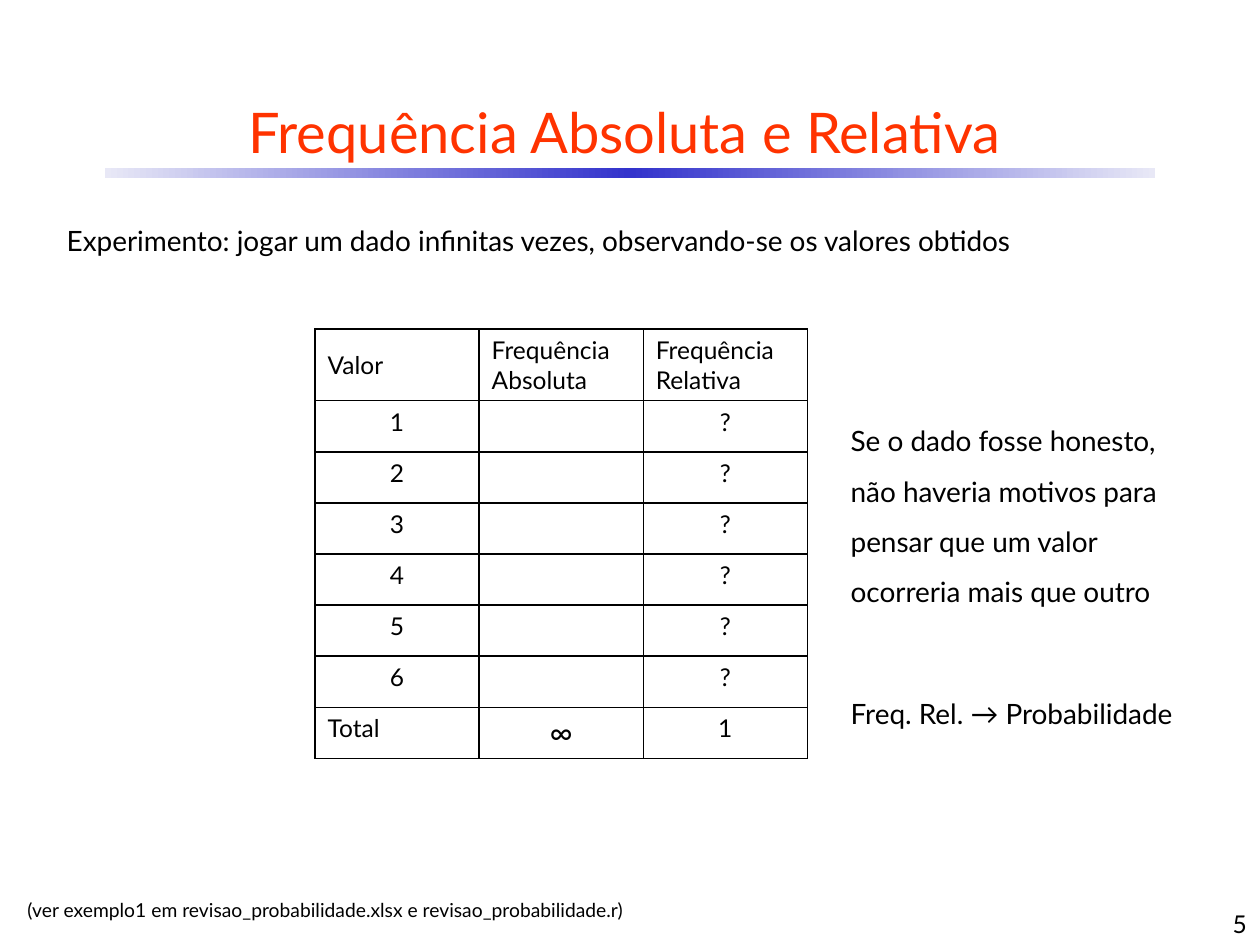
import copy

import pptx
import pptx.dml.color
import pptx.enum.shapes
import pptx.enum.text
import pptx.oxml
import pptx.oxml.ns
import pptx.util

Pt = pptx.util.Pt
Align = pptx.enum.text.PP_ALIGN
Anchor = pptx.enum.text.MSO_ANCHOR
FONT = "Lato"
ROWS = [
    ("Valor", "Frequência\vAbsoluta", "Frequência\vRelativa"),
    *((str(value), "", "?") for value in range(1, 7)),
    ("Total", "∞", "1"),
]


def color(hex_string):
    """Return an RGB colour from a hex string."""
    return pptx.dml.color.RGBColor.from_string(hex_string)


def write(frame, text, size, ink="000000", align=Align.LEFT):
    """Put one formatted paragraph into a text frame and return it."""
    para = frame.paragraphs[0]
    para.text = text
    para.alignment = align
    para.font.name = FONT
    para.font.size = Pt(size)
    para.font.color.rgb = color(ink)
    return para


def add_title(page, text):
    """Fill and place the title placeholder."""
    title = page.shapes.title
    title.left, title.top, title.width, title.height = Pt(24), Pt(48), Pt(666), Pt(54)
    title.text_frame.vertical_anchor = Anchor.MIDDLE
    title.text_frame.auto_size = pptx.enum.text.MSO_AUTO_SIZE.NONE
    write(title.text_frame, text, 32, "FF3300", Align.CENTER)


def add_rule(page):
    """Draw the bar under the title, fading towards both ends."""
    rule = page.shapes.add_shape(
        pptx.enum.shapes.MSO_SHAPE.RECTANGLE, Pt(60), Pt(96), Pt(600), Pt(6))
    rule.shadow.inherit = False
    rule.line.fill.background()
    rule.fill.gradient()
    rule.fill.gradient_angle = 0
    stop_list = rule._element.spPr.find(".//" + pptx.oxml.ns.qn("a:gsLst"))
    stop_list.append(copy.deepcopy(stop_list[0]))
    stops = zip(rule.fill.gradient_stops, (0, 0.5, 1), ("E8E8F6", "3333CC", "E8E8F6"))
    for stop, position, shade in stops:
        stop.color.rgb = color(shade)
        stop.position = position


def add_text(page, left, top, width, height, text, size, align=Align.LEFT,
             anchor=Anchor.TOP, spacing=None):
    """Add a wrapped text box."""
    box = page.shapes.add_textbox(Pt(left), Pt(top), Pt(width), Pt(height))
    box.text_frame.word_wrap = True
    box.text_frame.vertical_anchor = anchor
    write(box.text_frame, text, size, align=align).line_spacing = spacing


def add_borders(cell, width):
    """Give all four sides of a cell a black line."""
    properties = cell._tc.get_or_add_tcPr()
    for index, side in enumerate(("lnL", "lnR", "lnT", "lnB")):
        properties.insert(index, pptx.oxml.parse_xml(
            f'<a:{side} {pptx.oxml.ns.nsdecls("a")} w="{Pt(width)}">'
            '<a:solidFill><a:srgbClr val="000000"/></a:solidFill>'
            f'</a:{side}>'))


def add_frequency_table(page):
    """Add the table of values and frequencies."""
    column_width, header_height, row_height = 93.8, 41, 29.2
    table = page.shapes.add_table(
        len(ROWS), 3, Pt(180), Pt(188), Pt(3 * column_width),
        Pt(header_height + row_height * (len(ROWS) - 1))).table
    for column in table.columns:
        column.width = Pt(column_width)
    for row_index, texts in enumerate(ROWS):
        is_header = row_index == 0
        table.rows[row_index].height = Pt(header_height if is_header else row_height)
        for column_index, text in enumerate(texts):
            cell = table.cell(row_index, column_index)
            cell.fill.solid()
            cell.fill.fore_color.rgb = color("FFFFFF")
            cell.vertical_anchor = Anchor.MIDDLE if is_header else Anchor.TOP
            align = Align.LEFT if is_header or text == "Total" else Align.CENTER
            para = write(cell.text_frame, text, 18 if text == "∞" else 14, align=align)
            para.font.bold = False
            add_borders(cell, 1)


def main():
    """Build the slide and save it."""
    deck = pptx.Presentation()
    deck.slide_width, deck.slide_height = Pt(720), Pt(540)
    page = deck.slides.add_slide(deck.slide_layouts[5])
    add_rule(page)
    add_frequency_table(page)
    add_title(page, "Frequência Absoluta e Relativa")
    add_text(page, 8.6, 510, 428, 21,
             "(ver exemplo1 em revisao_probabilidade.xlsx e revisao_probabilidade.r)", 11)
    add_text(page, 569.5, 504, 150, 36, "5", 14, Align.RIGHT, Anchor.BOTTOM)
    add_text(page, 31, 124, 658, 26.6,
             "Experimento: jogar um dado infinitas vezes, observando-se os valores obtidos", 16)
    add_text(page, 479, 229, 215, 124,
             "Se o dado fosse honesto, não haveria motivos para pensar que um valor "
             "ocorreria mais que outro", 16, spacing=1.5)
    add_text(page, 479, 385, 215, 33, "Freq. Rel. → Probabilidade", 16, spacing=1.5)
    deck.save("out.pptx")


if __name__ == "__main__":
    main()
